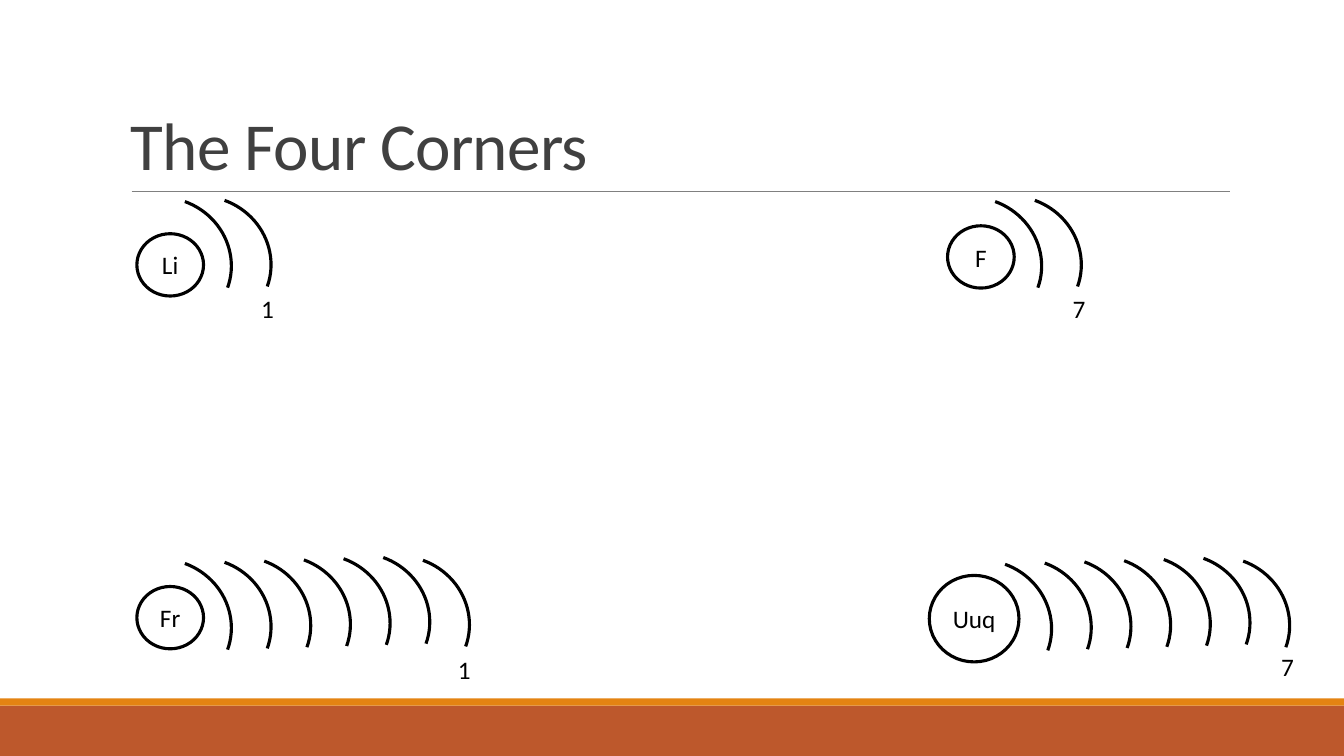
from lxml import etree
from pptx import Presentation
from pptx.dml.color import RGBColor
from pptx.enum.shapes import MSO_CONNECTOR, MSO_SHAPE
from pptx.enum.text import MSO_ANCHOR, PP_ALIGN
from pptx.oxml.ns import qn
from pptx.util import Cm, Pt

RECTANGLE = MSO_SHAPE.RECTANGLE
CIRCLE = MSO_SHAPE.FLOWCHART_CONNECTOR
ARC = MSO_SHAPE.ARC
STRAIGHT = MSO_CONNECTOR.STRAIGHT
TOP, MIDDLE, BOTTOM = MSO_ANCHOR.TOP, MSO_ANCHOR.MIDDLE, MSO_ANCHOR.BOTTOM
LEFT, CENTER = PP_ALIGN.LEFT, PP_ALIGN.CENTER

SLIDE_WIDTH, SLIDE_HEIGHT = 33.87, 19.05
ARC_WIDTH, ARC_HEIGHT, ARC_TILT = 3.5, 3.35, 19.9
ARC_STEP, ARC_RISE = 1.0, 0.03
OUTER_SHELL, OUTER_SHELL_DROP = 6, 0.1

ATOMS = [
    {"symbol": "Li", "nucleus": (3.45, 5.89, 1.68, 1.57), "first_arc": (2.34, 4.98),
     "shells": 2, "electrons": "1", "label": (6.27, 7.26)},
    {"symbol": "F", "nucleus": (23.88, 5.69, 1.68, 1.57), "first_arc": (22.76, 4.98),
     "shells": 2, "electrons": "7", "label": (26.72, 7.26)},
    {"symbol": "Fr", "nucleus": (3.45, 14.78, 1.68, 1.57), "first_arc": (2.34, 14.1),
     "shells": 7, "electrons": "1", "label": (11.23, 16.36)},
    {"symbol": "Uuq", "nucleus": (23.42, 14.5, 2.26, 2.18), "first_arc": (23.01, 14.12),
     "shells": 7, "electrons": "7", "label": (31.98, 16.28)},
]


def color(value):
    return RGBColor.from_string(value)


class SlideBuilder:
    font = "Calibri"
    ink = "000000"
    outline = 2.25
    text_size = 18

    def __init__(self, slide):
        self.slide = slide

    def fill_text(self, shape, text, size=text_size, ink=ink, align=CENTER,
                  anchor=MIDDLE, wrap=True, line_spacing=None, tracking=None):
        frame = shape.text_frame
        frame.word_wrap = wrap
        frame.vertical_anchor = anchor
        paragraph = frame.paragraphs[0]
        paragraph.alignment = align
        if line_spacing:
            paragraph.line_spacing = line_spacing
        run = paragraph.add_run()
        run.text = text
        for name, value in {"name": self.font, "size": Pt(size)}.items():
            setattr(run.font, name, value)
        run.font.color.rgb = color(ink)
        if tracking:
            run.font._element.set("spc", str(round(tracking * 100)))

    def shape(self, kind, box, fill=None, outlined=True, rotation=0):
        shape = self.slide.shapes.add_shape(kind, *map(Cm, box))
        shape.shadow.inherit = False
        shape.rotation = rotation
        if fill:
            shape.fill.solid()
            shape.fill.fore_color.rgb = color(fill)
        else:
            shape.fill.background()
        if outlined:
            shape.line.color.rgb = color(self.ink)
            shape.line.width = Pt(self.outline)
        else:
            shape.line.fill.background()
        return shape

    def text(self, box, text, **style):
        self.fill_text(self.slide.shapes.add_textbox(*map(Cm, box)), text, **style)

    def rule(self, start, end, ink, width):
        line = self.slide.shapes.add_connector(STRAIGHT, *map(Cm, start + end))
        line.line.color.rgb = color(ink)
        line.line.width = Pt(width)
        etree.SubElement(line._element.spPr, qn("a:effectLst"))

    def atom(self, symbol, nucleus, first_arc, shells, electrons, label):
        self.fill_text(self.shape(CIRCLE, nucleus, fill="FFFFFF"), symbol, wrap=False)
        left, top = first_arc
        for shell in range(shells):
            drop = OUTER_SHELL_DROP if shell == OUTER_SHELL else 0
            box = (left + shell * ARC_STEP, top - shell * ARC_RISE + drop,
                   ARC_WIDTH, ARC_HEIGHT)
            self.shape(ARC, box, rotation=ARC_TILT)
        self.text(label + (0.94, 1.02), electrons, anchor=TOP)


def main():
    presentation = Presentation()
    presentation.slide_width = Cm(SLIDE_WIDTH)
    presentation.slide_height = Cm(SLIDE_HEIGHT)
    slide = presentation.slides.add_slide(presentation.slide_layouts[6])
    builder = SlideBuilder(slide)

    builder.shape(RECTANGLE, (0, 17.78, SLIDE_WIDTH, 1.27), fill="BD582C", outlined=False)
    builder.shape(RECTANGLE, (0, 17.6, SLIDE_WIDTH, 0.18), fill="E48312", outlined=False)
    builder.rule((3.32, 4.83), (31.0, 4.83), "808080", 0.5)
    builder.text((3.05, 0.73, 27.94, 4.03), "The Four Corners", size=48, ink="404040",
                 align=LEFT, anchor=BOTTOM, line_spacing=0.85, tracking=-0.5)
    for atom in ATOMS:
        builder.atom(**atom)

    presentation.save("out.pptx")


if __name__ == "__main__":
    main()
